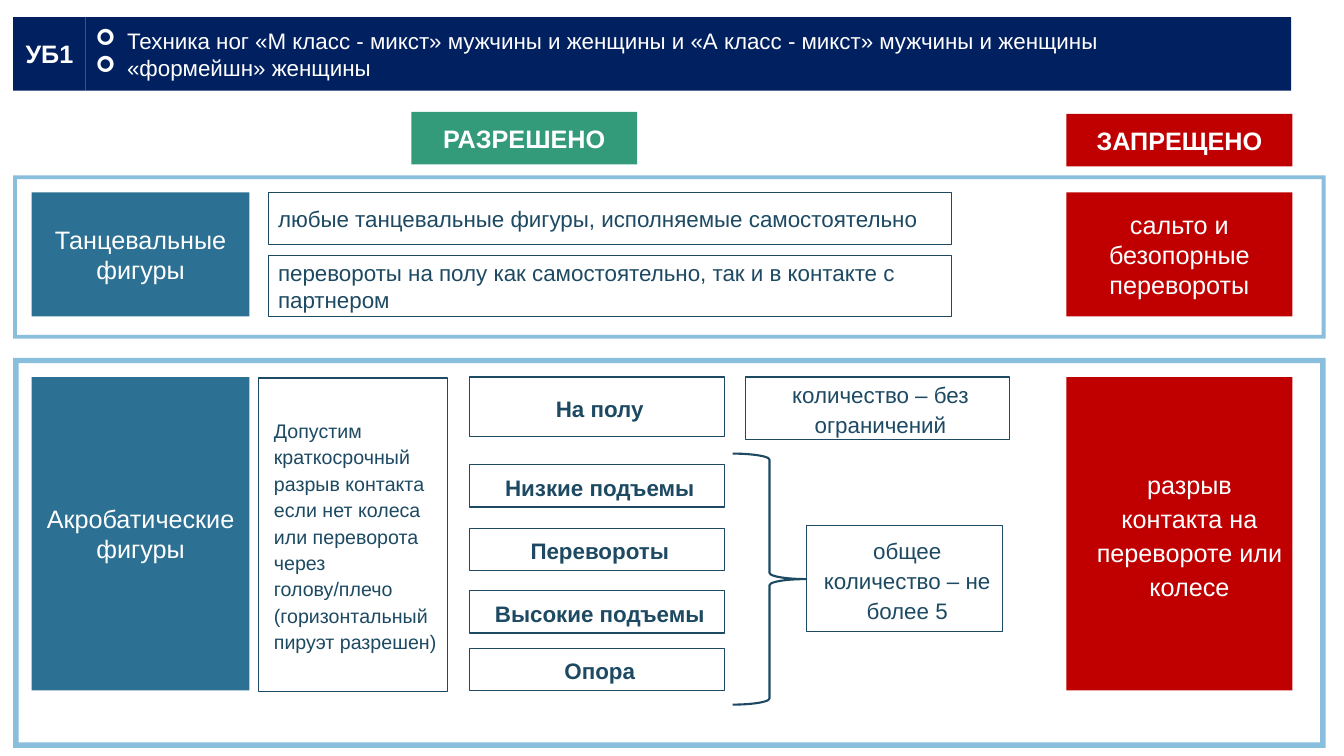
from lxml import etree
from pptx import Presentation
from pptx import util as u
from pptx.dml.color import RGBColor
from pptx.enum import shapes, text
from pptx.oxml.ns import qn

WHITE = RGBColor(0xFF, 0xFF, 0xFF)
NAVY = RGBColor(0x00, 0x20, 0x60)
INK = RGBColor(0x1D, 0x4A, 0x62)
TEAL = RGBColor(0x2C, 0x70, 0x93)
SKY = RGBColor(0x89, 0xBF, 0xDC)
GREEN = RGBColor(0x34, 0x9B, 0x7A)
RED = RGBColor(0xC0, 0x00, 0x00)

CENTER, LEFT = text.PP_ALIGN.CENTER, text.PP_ALIGN.LEFT


class RulesSlide:
    font_name = "Arial"
    bullet = "➢"
    bullet_indent = 22.5

    def __init__(self, slide):
        self.slide = slide

    def shape(self, kind, box, fill=None, line_width=None):
        shape = self.slide.shapes.add_shape(kind, *map(u.Pt, box))
        shape.shadow.inherit = False
        if fill is None:
            shape.fill.background()
        else:
            shape.fill.solid()
            shape.fill.fore_color.rgb = fill
        if line_width is None:
            shape.line.fill.background()
        else:
            shape.line.color.rgb = INK
            shape.line.width = u.Pt(line_width)
        return shape

    def box(self, box, lines, fill=None, size=16, bold=False, align=CENTER,
            indent=None, bulleted=False):
        """Filled boxes have white text, outlined ones dark text."""
        shape = self.shape(shapes.MSO_SHAPE.RECTANGLE, box, fill,
                           0.75 if fill is None else None)
        frame = shape.text_frame
        frame.word_wrap = True
        frame.vertical_anchor = text.MSO_ANCHOR.MIDDLE
        for index, line in enumerate(lines):
            paragraph = frame.add_paragraph() if index else frame.paragraphs[0]
            paragraph.text = line
            paragraph.alignment = align
            if indent is not None:
                paragraph.line_spacing = 1.12
                paragraph.space_after = u.Pt(0.5)
                self.indent(paragraph, indent, 0)
            if bulleted:
                self.indent(paragraph, self.bullet_indent, -self.bullet_indent)
                properties = paragraph._p.get_or_add_pPr()
                etree.SubElement(properties, qn("a:buFont"), typeface="Wingdings")
                etree.SubElement(properties, qn("a:buChar"), char=self.bullet)
            paragraph.font.name = self.font_name
            paragraph.font.size = u.Pt(size)
            paragraph.font.bold = bold
            paragraph.font.color.rgb = INK if fill is None else WHITE

    def indent(self, paragraph, margin, first):
        properties = paragraph._p.get_or_add_pPr()
        properties.set("marL", str(u.Pt(margin)))
        properties.set("indent", str(u.Pt(first)))

    def frame(self, top, height, thickness):
        frame = self.shape(shapes.MSO_SHAPE.FRAME, (9.4, top, 937.4, height), SKY)
        frame.adjustments[0] = thickness

    def brace(self, box):
        self.shape(shapes.MSO_SHAPE.RIGHT_BRACE, box, line_width=1.5)


def main():
    presentation = Presentation()
    presentation.slide_width, presentation.slide_height = u.Pt(960), u.Pt(540)
    rules = RulesSlide(presentation.slides.add_slide(presentation.slide_layouts[6]))

    # Shared columns and rows
    category_left, category_width = 22.7, 155.5
    banned_left, banned_width = 761.8, 161.3
    dance_top, dance_height = 137.5, 88.6
    acro_top, acro_height = 269.3, 223.9

    # Header
    rules.box((61.2, 12.2, 861.1, 52.6),
              ["Техника ног «М класс - микст» мужчины и женщины и "
               "«А класс - микст» мужчины и женщины",
               "«формейшн» женщины"], NAVY, align=LEFT, bulleted=True)
    rules.box((9.4, 12.2, 51.8, 52.6), ["УБ1"], NAVY, 18, True)

    # Column titles
    rules.box((293.8, 80, banned_width, 37.4), ["РАЗРЕШЕНО"], GREEN, 18, True)
    rules.box((banned_left, 81.4, banned_width, 37.4), ["ЗАПРЕЩЕНО"], RED, 18, True)

    # Section frames
    rules.frame(125.3, 116.6, 0.023)
    rules.frame(255.6, 278.6, 0.014)

    # Dance figures
    rules.box((category_left, dance_top, category_width, dance_height),
              ["Танцевальные фигуры"], TEAL, 18)
    rules.box((191.5, dance_top, 488.2, 37.4),
              ["любые танцевальные фигуры, исполняемые самостоятельно"], align=LEFT)
    rules.box((191.5, 182.2, 488.2, 43.9),
              ["перевороты на полу как самостоятельно, так и в контакте с партнером"],
              align=LEFT)
    rules.box((banned_left, dance_top, banned_width, dance_height),
              ["сальто и безопорные перевороты"], RED, 18)

    # Acrobatic figures
    rules.box((category_left, acro_top, category_width, acro_height),
              ["Акробатические фигуры"], TEAL, 18)
    rules.box((185, 270, 134.6, acro_height),
              ["Допустим краткосрочный разрыв контакта если нет колеса или переворота "
               "через голову/плечо (горизонтальный пируэт разрешен)"],
              size=14, align=LEFT, indent=3.6)
    for name, top, height in (("На полу", acro_top, 42.5),
                              ("Низкие подъемы", 332, 30.2),
                              ("Перевороты", 377.3, 30.2),
                              ("Высокие подъемы", 422, 30.2),
                              ("Опора", 463, 30.2)):
        rules.box((335.5, top, 182.2, height), [name], bold=True, indent=3.6)
    rules.box((banned_left, acro_top, banned_width, acro_height),
              ["разрыв контакта на перевороте или колесе"], RED, 18, indent=14.4)

    # Limits on the number of figures
    rules.box((532.8, acro_top, 188.6, 44.6), ["количество – без ограничений"], indent=3.6)
    rules.brace((523.4, 324, 52.6, 179.3))
    rules.box((576, 375.1, 140.4, 76.3), ["общее количество – не более 5"], indent=3.6)

    presentation.save("out.pptx")


if __name__ == "__main__":
    main()
